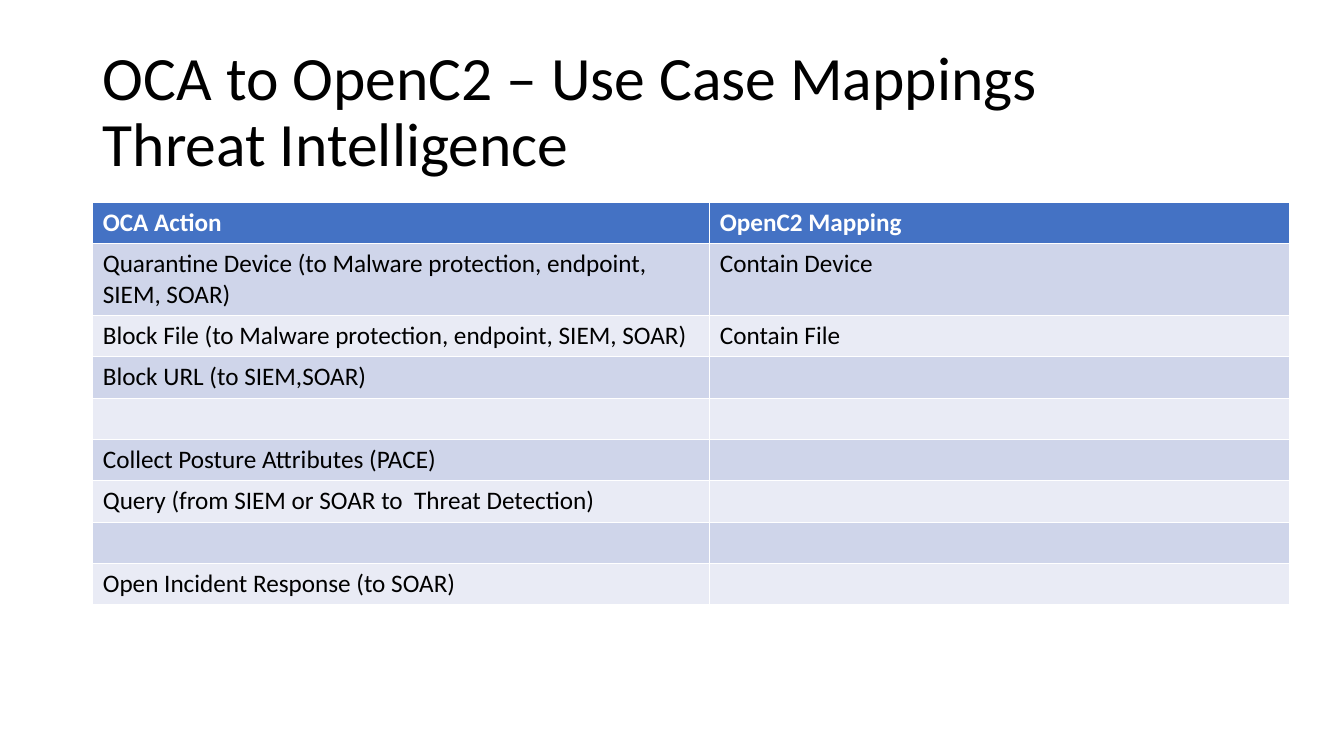
from pptx import Presentation
from pptx.dml.color import RGBColor
from pptx.enum.text import MSO_ANCHOR, MSO_AUTO_SIZE, PP_ALIGN
from pptx.util import Inches, Pt

LEFT = PP_ALIGN.LEFT
MIDDLE = MSO_ANCHOR.MIDDLE
NO_AUTOFIT = MSO_AUTO_SIZE.NONE

FONT = "Calibri"
BLACK = RGBColor(0x00, 0x00, 0x00)
WHITE = RGBColor(0xFF, 0xFF, 0xFF)
HEADER_BLUE = RGBColor(0x44, 0x72, 0xC4)
BANDS = (RGBColor(0xCF, 0xD5, 0xEA), RGBColor(0xE9, 0xEB, 0xF5))

TITLE_LINES = ("OCA to OpenC2 – Use Case Mappings ", "Threat Intelligence")
MAPPINGS = (
    ("OCA Action", "OpenC2 Mapping"),
    ("Quarantine Device (to Malware protection, endpoint, SIEM, SOAR)", "Contain Device"),
    ("Block File (to Malware protection, endpoint, SIEM, SOAR)", "Contain File"),
    ("Block URL (to SIEM,SOAR)", ""),
    ("", ""),
    ("Collect Posture Attributes (PACE)", ""),
    ("Query (from SIEM or SOAR to  Threat Detection)", ""),
    ("", ""),
    ("Open Incident Response (to SOAR)", ""),
)
COLUMN_WIDTHS = (6.12, 5.75)
ROW_HEIGHT = 0.41


def add_span(para, text, size, color, bold=False):
    """Add one formatted run to a paragraph."""
    span = para.add_run()
    span.text = text
    span.font.name = FONT
    span.font.size = Pt(size)
    span.font.bold = bold
    span.font.color.rgb = color


def add_title(page, left, top, width, height):
    """Place the two-line title in the title placeholder."""
    title = page.shapes.title
    title.left, title.top = Inches(left), Inches(top)
    title.width, title.height = Inches(width), Inches(height)
    frame = title.text_frame
    frame.auto_size = NO_AUTOFIT
    frame.vertical_anchor = MIDDLE
    para = frame.paragraphs[0]
    para.alignment = LEFT
    para.line_spacing = 0.9
    for index, line in enumerate(TITLE_LINES):
        if index:
            para.add_line_break()
        add_span(para, line, 44, BLACK)


def add_mapping_table(page, left, top):
    """Place the banded table of actions and their mappings."""
    table = page.shapes.add_table(
        len(MAPPINGS), len(COLUMN_WIDTHS), Inches(left), Inches(top),
        Inches(sum(COLUMN_WIDTHS)), Inches(ROW_HEIGHT * len(MAPPINGS)),
    ).table
    for column, width in zip(table.columns, COLUMN_WIDTHS):
        column.width = Inches(width)
    for index, (row, texts) in enumerate(zip(table.rows, MAPPINGS)):
        row.height = Inches(ROW_HEIGHT)
        header = index == 0
        for cell, text in zip(row.cells, texts):
            cell.fill.solid()
            cell.fill.fore_color.rgb = HEADER_BLUE if header else BANDS[(index - 1) % 2]
            if text:
                add_span(cell.text_frame.paragraphs[0], text, 18,
                         WHITE if header else BLACK, header)


def main():
    """Build and save the deck."""
    deck = Presentation()
    deck.slide_width, deck.slide_height = Inches(13.33), Inches(7.5)
    page = deck.slides.add_slide(deck.slide_layouts.get_by_name("Title Only"))
    add_title(page, 0.92, 0.4, 11.5, 1.45)
    add_mapping_table(page, 0.92, 2.01)
    deck.save("out.pptx")


if __name__ == "__main__":
    main()
